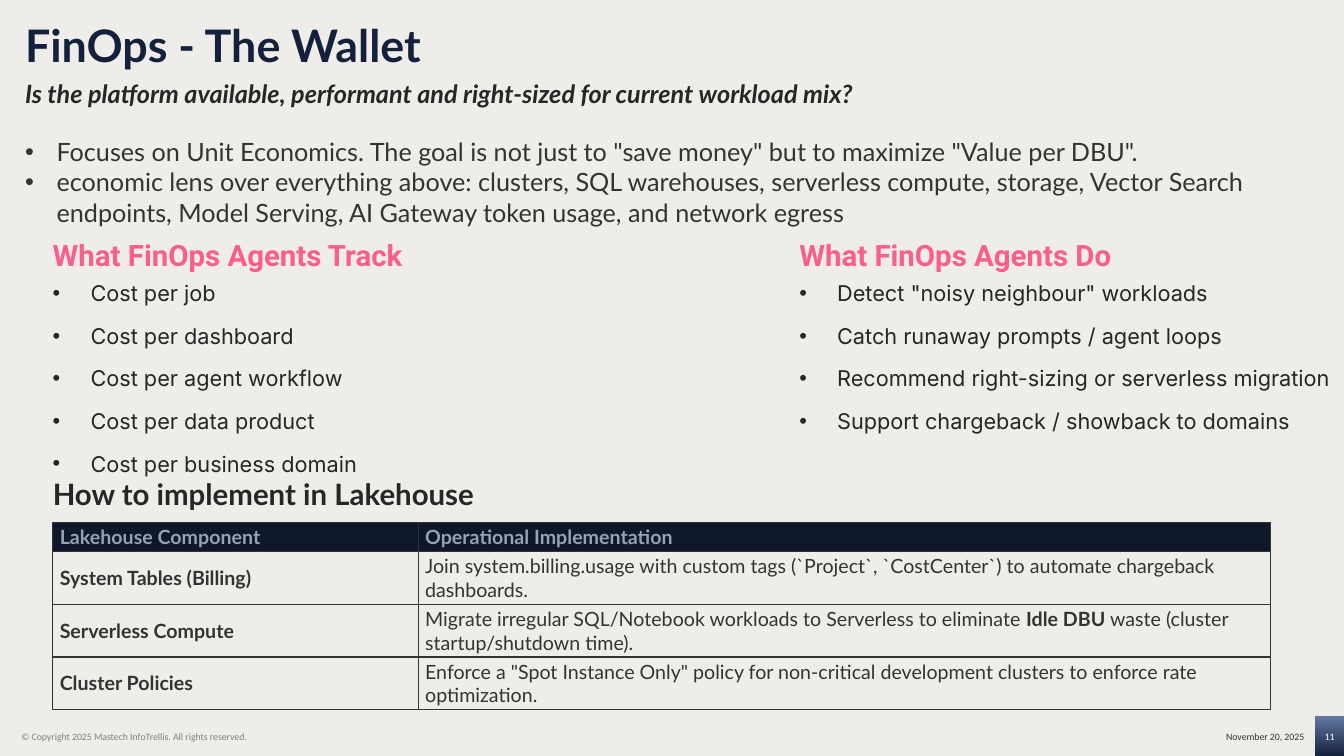
from dataclasses import dataclass
from typing import Optional

import pptx
import pptx.dml.color
import pptx.enum.shapes
import pptx.enum.text
import pptx.oxml
import pptx.oxml.ns
import pptx.util

Pt = pptx.util.Pt
RGBColor = pptx.dml.color.RGBColor
Align = pptx.enum.text.PP_ALIGN
Anchor = pptx.enum.text.MSO_ANCHOR

PAPER = RGBColor(0xEE, 0xED, 0xE9)
NAVY = RGBColor(0x14, 0x21, 0x3D)
STEEL = RGBColor(0x64, 0x7A, 0xA3)
INK = RGBColor(0x27, 0x25, 0x25)
CHARCOAL = RGBColor(0x33, 0x33, 0x33)
GREY = RGBColor(0x7F, 0x7F, 0x7F)
WHITE = RGBColor(0xFF, 0xFF, 0xFF)
PINK = RGBColor(0xF9, 0x5F, 0x88)
HEADER_FILL = RGBColor(0x0F, 0x17, 0x2A)
HEADER_TEXT = RGBColor(0x94, 0xA3, 0xB8)


@dataclass(frozen=True)
class Style:
    font: str
    size: float
    color: RGBColor
    bold: bool = False
    italic: bool = False
    spacing: Optional[float] = None  # a multiple below 5, otherwise points
    indent: float = 0  # hanging bullet indent
    align: Align = Align.LEFT
    anchor: Anchor = Anchor.TOP
    tight: bool = False  # no insets and no wrapping


@dataclass(frozen=True)
class TextItem:
    left: float
    top: float
    width: float
    height: float
    lines: tuple[str, ...]
    style: Style


@dataclass(frozen=True)
class AgentColumn:
    left: float
    heading: str
    points: tuple[str, ...]


TITLE = Style("Lato", 32, NAVY, bold=True, spacing=0.9)
QUESTION = Style("Lato", 18, INK, bold=True, italic=True, spacing=0.9)
SUMMARY = Style("Lato", 18, CHARCOAL, indent=22.5)
AGENT_HEADING = Style("Roboto", 21, PINK, bold=True, spacing=26.5, tight=True)
TABLE_HEADING = Style("Lato", 21, INK, bold=True, spacing=26.5, tight=True)
AGENT_POINT = Style("Inter", 15.5, INK, spacing=25, indent=27, tight=True)
COPYRIGHT = Style("Calibri", 7, GREY, anchor=Anchor.MIDDLE)
DATE = Style("Calibri", 7, CHARCOAL, align=Align.RIGHT, anchor=Anchor.MIDDLE)
PAGE_NUMBER = Style("Calibri", 7, WHITE, align=Align.RIGHT, anchor=Anchor.MIDDLE)

MARGIN = 37.7
HEADING_TOP = 168.1
POINTS_TOP = 193.7
POINT_PITCH = 30.4

TEXTS = [
    TextItem(10.8, 13.7, 906, 34.5, ("FinOps - The Wallet",), TITLE),
    TextItem(10.8, 54.7, 882, 20, (
        "Is the platform available, performant and right-sized for current workload mix?",
    ), QUESTION),
    TextItem(10.8, 94, 949, 94.3, (
        'Focuses on Unit Economics. The goal is not just to "save money" but to maximize "Value per DBU".',
        "economic lens over everything above: clusters, SQL warehouses, serverless compute, storage, "
        "Vector Search endpoints, Model Serving, AI Gateway token usage, and network egress",
    ), SUMMARY),
    TextItem(MARGIN, 339.1, 400, 26.5, ("How to implement in Lakehouse",), TABLE_HEADING),
    TextItem(8.1, 512, 217, 28.8, (
        "© Copyright 2025 Mastech InfoTrellis. All rights reserved.",
    ), COPYRIGHT),
    TextItem(722.7, 514, 216, 24.5, ("November 20, 2025",), DATE),
    TextItem(928.6, 512, 31.7, 28.8, ("11",), PAGE_NUMBER),
]

AGENT_COLUMNS = [
    AgentColumn(MARGIN, "What FinOps Agents Track", (
        "Cost per job",
        "Cost per dashboard",
        "Cost per agent workflow",
        "Cost per data product",
        "Cost per business domain",
    )),
    AgentColumn(571, "What FinOps Agents Do", (
        'Detect "noisy neighbour" workloads',
        "Catch runaway prompts / agent loops",
        "Recommend right-sizing or serverless migration",
        "Support chargeback / showback to domains",
    )),
]

KEY_TERM = "Idle DBU"
COMPONENTS = [
    ("Lakehouse Component", "Operational Implementation"),
    ("System Tables (Billing)",
     "Join system.billing.usage with custom tags (`Project`, `CostCenter`) to automate chargeback dashboards."),
    ("Serverless Compute",
     "Migrate irregular SQL/Notebook workloads to Serverless to eliminate Idle DBU waste "
     "(cluster startup/shutdown time)."),
    ("Cluster Policies",
     'Enforce a "Spot Instance Only" policy for non-critical development clusters to enforce rate optimization.'),
]
COLUMN_WIDTHS = (261, 609)
ROW_HEIGHTS = (21, 37.7, 37.7, 37.7)


def add_bullet(paragraph, indent: float) -> None:
    properties = paragraph._p.get_or_add_pPr()
    properties.set("marL", str(Pt(indent)))
    properties.set("indent", str(-Pt(indent)))
    namespace = pptx.oxml.ns.nsdecls("a")
    properties.append(pptx.oxml.parse_xml(f'<a:buFont {namespace} typeface="Arial"/>'))
    properties.append(pptx.oxml.parse_xml(f'<a:buChar {namespace} char="•"/>'))


def format_font(font, style: Style) -> None:
    font.name, font.size = style.font, Pt(style.size)
    font.bold, font.italic = style.bold, style.italic
    font.color.rgb = style.color


def add_text(slide, item: TextItem) -> None:
    style = item.style
    box = slide.shapes.add_textbox(Pt(item.left), Pt(item.top), Pt(item.width), Pt(item.height))
    frame = box.text_frame
    frame.text = "\n".join(item.lines)
    frame.word_wrap = not style.tight
    frame.vertical_anchor = style.anchor
    if style.tight:
        frame.margin_left = frame.margin_right = frame.margin_top = frame.margin_bottom = 0
    for paragraph in frame.paragraphs:
        paragraph.alignment = style.align
        if style.spacing:
            paragraph.line_spacing = style.spacing if style.spacing < 5 else Pt(style.spacing)
        if style.indent:
            add_bullet(paragraph, style.indent)
        for run in paragraph.runs:
            format_font(run.font, style)


def add_agent_column(slide, column: AgentColumn) -> None:
    add_text(slide, TextItem(column.left, HEADING_TOP, 261, 26.5, (column.heading,), AGENT_HEADING))
    for index, point in enumerate(column.points):
        top = POINTS_TOP + index * POINT_PITCH
        add_text(slide, TextItem(column.left, top, 494.6, 25, (point,), AGENT_POINT))


def add_borders(cell) -> None:
    properties = cell._tc.get_or_add_tcPr()
    for side in ("lnL", "lnR", "lnT", "lnB"):
        properties.append(pptx.oxml.parse_xml(
            f'<a:{side} {pptx.oxml.ns.nsdecls("a")} w="{Pt(1)}"><a:solidFill>'
            f'<a:srgbClr val="{CHARCOAL}"/></a:solidFill></a:{side}>'))


def fill_cell(cell, text: str, is_header: bool, bold: bool) -> None:
    add_borders(cell)
    if is_header:
        cell.fill.solid()
        cell.fill.fore_color.rgb = HEADER_FILL
    else:
        cell.fill.background()
    cell.vertical_anchor = Anchor.MIDDLE
    cell.margin_left = cell.margin_right = Pt(5)
    cell.margin_top = cell.margin_bottom = Pt(2)
    paragraph = cell.text_frame.paragraphs[0]
    before, term, after = text.partition(KEY_TERM)
    for part in filter(None, (before, term, after)):
        run = paragraph.add_run()
        run.text = part
        color = HEADER_TEXT if is_header else CHARCOAL
        format_font(run.font, Style("Lato", 14, color, bold=bold or part == KEY_TERM))


def add_component_table(slide) -> None:
    table = slide.shapes.add_table(
        len(COMPONENTS), len(COLUMN_WIDTHS), Pt(MARGIN), Pt(373),
        Pt(sum(COLUMN_WIDTHS)), Pt(sum(ROW_HEIGHTS))).table
    table.horz_banding = False
    for column, width in zip(table.columns, COLUMN_WIDTHS):
        column.width = Pt(width)
    for row_index, (row, texts) in enumerate(zip(table.rows, COMPONENTS)):
        row.height = Pt(ROW_HEIGHTS[row_index])
        for column_index, (cell, text) in enumerate(zip(row.cells, texts)):
            is_header = row_index == 0
            fill_cell(cell, text, is_header, is_header or column_index == 0)


def add_page_tab(slide) -> None:
    tab = slide.shapes.add_shape(
        pptx.enum.shapes.MSO_SHAPE.RECTANGLE, Pt(939), Pt(511.2), Pt(21), Pt(28.8))
    tab.shadow.inherit = False
    tab.line.fill.background()
    tab.fill.gradient()
    tab.fill.gradient_angle = 270
    for stop, color in zip(tab.fill.gradient_stops, (STEEL, NAVY)):
        stop.color.rgb = color


def main() -> None:
    presentation = pptx.Presentation()
    presentation.slide_width, presentation.slide_height = Pt(960), Pt(540)
    slide = presentation.slides.add_slide(presentation.slide_layouts[6])
    slide.background.fill.solid()
    slide.background.fill.fore_color.rgb = PAPER
    add_page_tab(slide)
    for item in TEXTS:
        add_text(slide, item)
    add_component_table(slide)
    for column in AGENT_COLUMNS:
        add_agent_column(slide, column)
    presentation.save("out.pptx")


if __name__ == "__main__":
    main()
